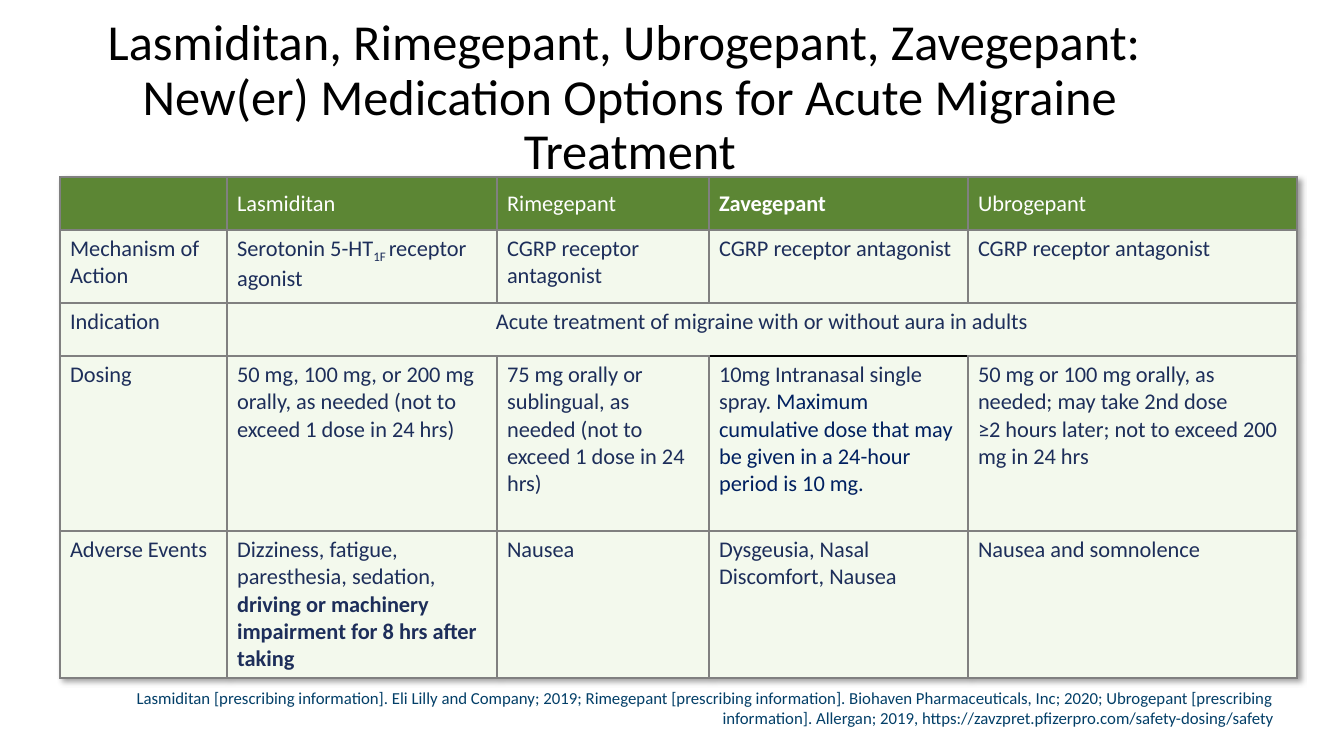
from lxml import etree
from pptx import Presentation
from pptx.dml.color import RGBColor
from pptx.enum.text import MSO_ANCHOR as Anchor, PP_ALIGN as Align
from pptx.oxml import parse_xml
from pptx.oxml.ns import nsdecls, qn
from pptx.util import Pt

WHITE = RGBColor(0xFF, 0xFF, 0xFF)
BLACK = RGBColor(0, 0, 0)
GREEN = RGBColor(0x5C, 0x86, 0x34)
PALE = RGBColor(0xF3, 0xF9, 0xED)
INK = RGBColor(0x1D, 0x2E, 0x5A)
NAVY = RGBColor(0x00, 0x20, 0x60)
TEAL = RGBColor(0x03, 0x3F, 0x68)
GREY = RGBColor(0x80, 0x80, 0x80)
FONT = "Calibri"

TITLE = ("Lasmiditan, Rimegepant, Ubrogepant, Zavegepant: \n"
         "New(er) Medication Options for Acute Migraine Treatment")
SOURCES = ("Lasmiditan [prescribing information]. Eli Lilly and Company; 2019; "
           "Rimegepant [prescribing information]. Biohaven Pharmaceuticals, Inc; 2020; "
           "Ubrogepant [prescribing information]. Allergan; 2019, "
           "https://zavzpret.pfizerpro.com/safety-dosing/safety")
CGRP = [("CGRP receptor antagonist", {})]
ROWS = [
    [[], [("Lasmiditan", {})], [("Rimegepant", {})],
     [("Zavegepant", {"bold": True})], [("Ubrogepant", {})]],
    [[("Mechanism of Action", {})],
     [("Serotonin 5-HT", {}), ("1F ", {"sub": True}), ("receptor agonist", {})],
     CGRP, CGRP, CGRP],
    [[("Indication", {})],
     [("Acute treatment of migraine with or without aura in adults", {})],
     [], [], []],
    [[("Dosing", {})],
     [("50 mg, 100 mg, or 200 mg orally, as needed (not to exceed 1 dose in 24 hrs)", {})],
     [("75 mg orally or sublingual, as needed (not to exceed 1 dose in 24 hrs)", {})],
     [("10mg Intranasal single spray. ", {}),
      ("Maximum cumulative dose that may be given in a 24-hour period is 10 mg.",
       {"color": NAVY})],
     [("50 mg or 100 mg orally, as needed; may take 2nd dose \n"
       "≥2 hours later; not to exceed 200 mg in 24 hrs", {})]],
    [[("Adverse Events", {})],
     [("Dizziness, fatigue, paresthesia, sedation, ", {}),
      ("driving or machinery impairment for 8 hrs after taking", {"bold": True})],
     [("Nausea", {})],
     [("Dysgeusia, Nasal Discomfort, Nausea", {})],
     [("Nausea and somnolence", {})]],
]
COL_WIDTHS = [167, 270, 212, 259, 329]
ROW_HEIGHTS = [53, 73, 53, 175, 144]
INDICATION, DOSING, ZAVEGEPANT = 2, 3, 3

SLIDE_W, SLIDE_H = 1344, 756
EMU_PER_PX = 12192000 / SLIDE_W


def px(n):
    """Turn pixels into EMU."""
    return round(n * EMU_PER_PX)


def add_text(p, text, size, color, bold=False, sub=False):
    """Add text to a paragraph, with a line break at each newline."""
    for i, line in enumerate(text.split("\n")):
        if i:
            p.add_line_break()
        r = p.add_run()
        r.text = line
        r.font.name, r.font.size, r.font.bold = FONT, Pt(size), bold
        r.font.color.rgb = color
        if sub:
            r._r.get_or_add_rPr().set("baseline", "-25000")


def set_borders(cell, top=GREY, bottom=GREY):
    """Draw one-point borders round a cell."""
    tcPr = cell._tc.get_or_add_tcPr()
    for side, color in zip("LRTB", (GREY, GREY, top, bottom)):
        ln = etree.SubElement(tcPr, qn("a:ln" + side), w=str(Pt(1)))
        fill = etree.SubElement(ln, qn("a:solidFill"))
        etree.SubElement(fill, qn("a:srgbClr"), val=str(color))


def add_medication_table(s):
    """Add the medication comparison with its shadow."""
    table = s.shapes.add_table(len(ROWS), len(COL_WIDTHS), px(60), px(177),
                               px(sum(COL_WIDTHS)), px(sum(ROW_HEIGHTS))).table
    table.horz_banding = False
    table._tbl.tblPr.append(parse_xml(
        f'<a:effectLst {nsdecls("a")}><a:outerShdw blurRad="50800" dist="38100" '
        'dir="2700000" algn="tl" rotWithShape="0"><a:srgbClr val="000000">'
        '<a:alpha val="40000"/></a:srgbClr></a:outerShdw></a:effectLst>'))
    for col, w in zip(table.columns, COL_WIDTHS):
        col.width = px(w)
    for row, h in zip(table.rows, ROW_HEIGHTS):
        row.height = px(h)
    for i, row in enumerate(ROWS):
        for j, runs in enumerate(row):
            cell = table.cell(i, j)
            black_edge = j == ZAVEGEPANT
            set_borders(cell, BLACK if black_edge and i == DOSING else GREY,
                        BLACK if black_edge and i == INDICATION else GREY)
            cell.fill.solid()
            cell.fill.fore_color.rgb = PALE if i else GREEN
            cell.vertical_anchor = Anchor.TOP if i else Anchor.MIDDLE
            for text, style in runs:
                add_text(cell.text_frame.paragraphs[0], text, 16,
                         **{"color": INK if i else WHITE, **style})
    merged = table.cell(INDICATION, 1)
    merged.merge(table.cell(INDICATION, len(COL_WIDTHS) - 1))
    merged.text_frame.paragraphs[0].alignment = Align.CENTER


def main():
    """Build the slide."""
    prs = Presentation()
    prs.slide_width, prs.slide_height = px(SLIDE_W), px(SLIDE_H)
    s = prs.slides.add_slide(prs.slide_layouts[5])

    title = s.shapes.title
    title.left, title.top, title.width, title.height = map(px, (45, 12, 1170, 95))
    title.text_frame.vertical_anchor = Anchor.TOP
    p = title.text_frame.paragraphs[0]
    p.alignment, p.line_spacing = Align.CENTER, 0.9
    add_text(p, TITLE, 36, BLACK)

    add_medication_table(s)

    tf = s.shapes.add_textbox(*map(px, (48, 687, 1236, 41))).text_frame
    tf.word_wrap = True
    tf.vertical_anchor = Anchor.MIDDLE
    p = tf.paragraphs[0]
    p.alignment = Align.RIGHT
    add_text(p, SOURCES, 12, TEAL)

    prs.save("out.pptx")


if __name__ == "__main__":
    main()
